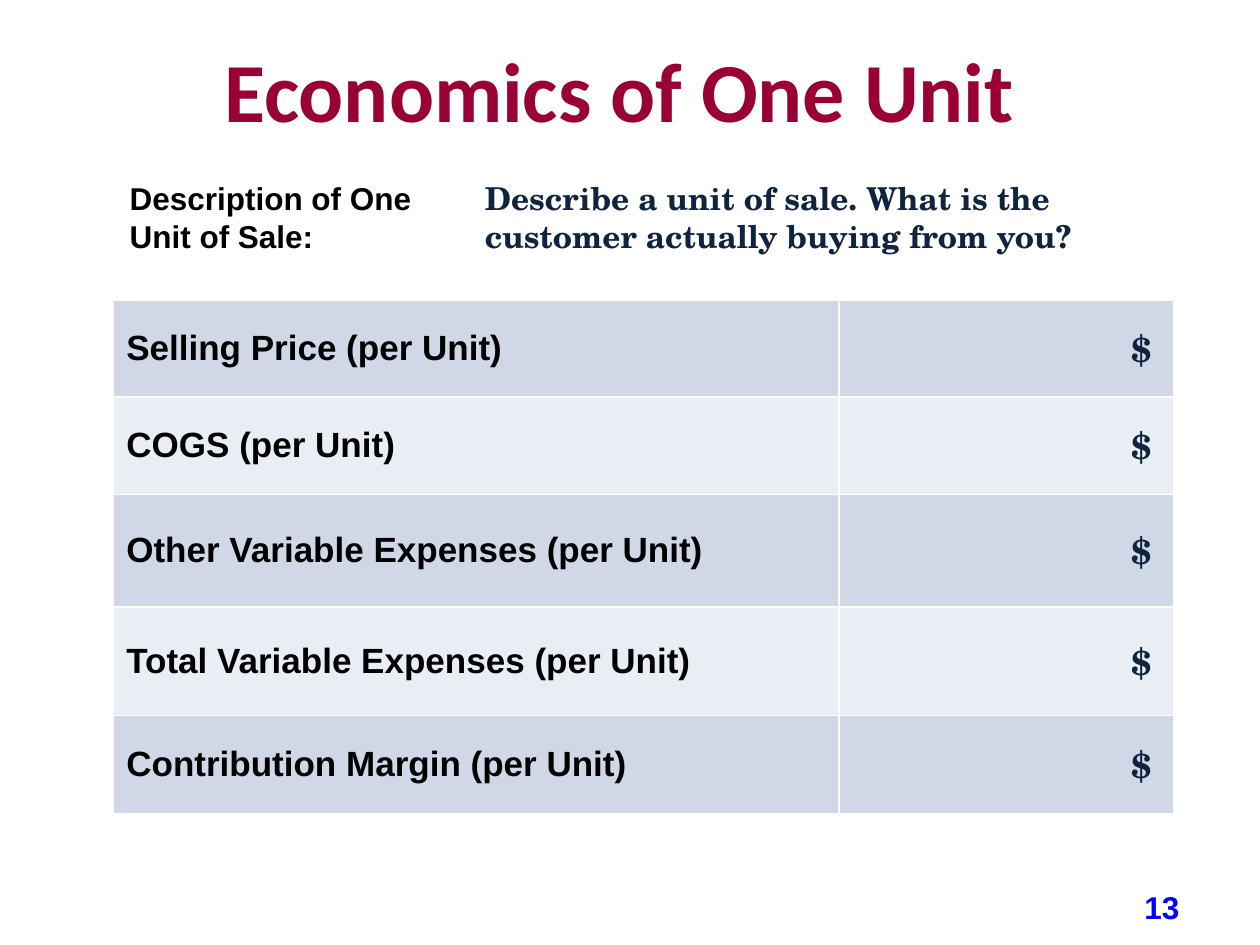
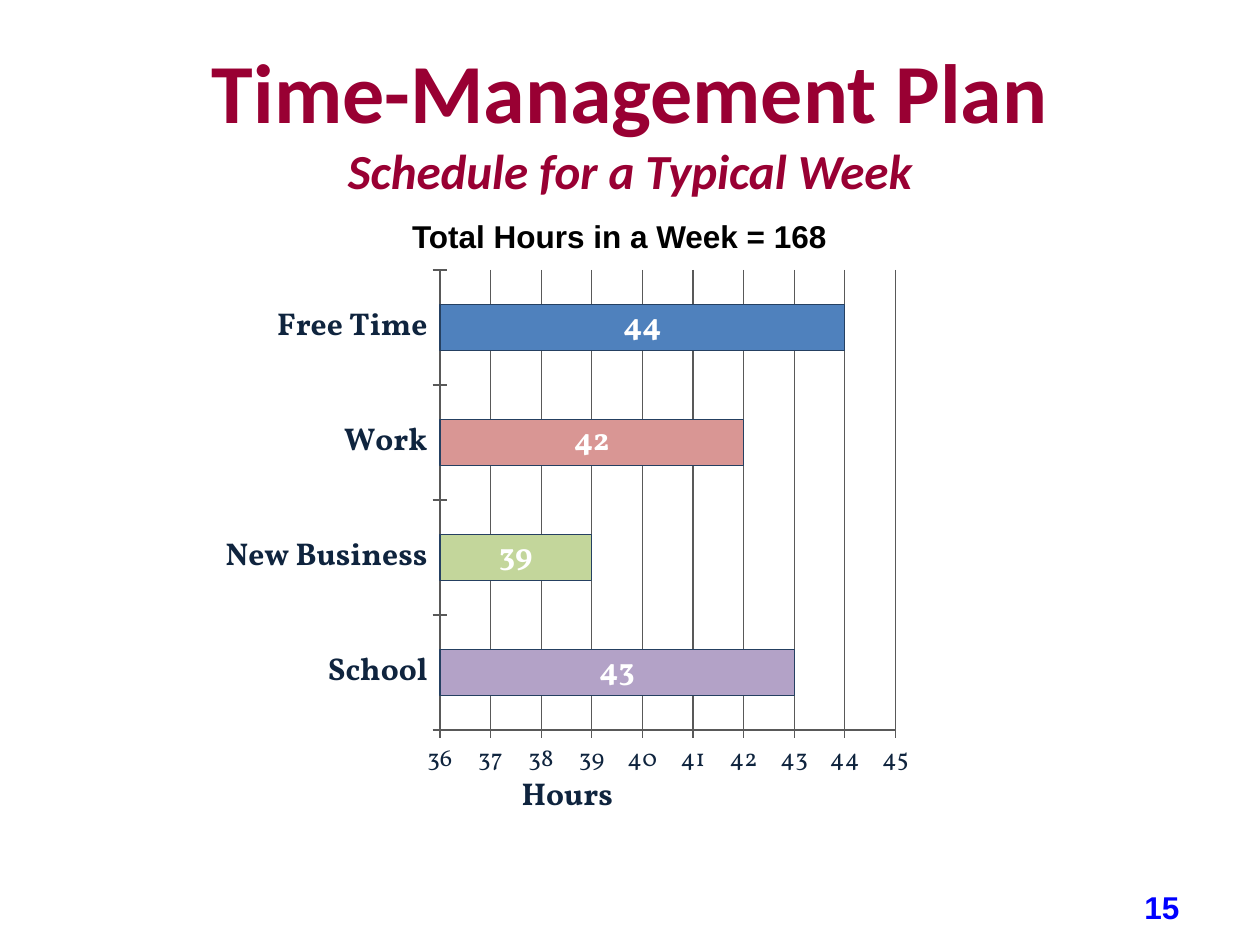
from dataclasses import dataclass

from lxml.etree import SubElement
from pptx import Presentation
from pptx.chart.data import CategoryChartData
from pptx.dml.color import RGBColor
from pptx.enum.chart import XL_CHART_TYPE, XL_LABEL_POSITION, XL_TICK_MARK
from pptx.enum.text import MSO_ANCHOR, PP_ALIGN
from pptx.oxml import parse_xml
from pptx.oxml.ns import nsdecls, qn
from pptx.util import Pt


@dataclass(frozen=True)
class Theme:
    heading: str = "990033"
    text: str = "000000"
    accent: str = "0F243E"
    number: str = "0000FF"
    white: str = "FFFFFF"
    bands: tuple = ("D0D8E8", "E9EDF4")
    bar: str = "4F81BD"
    bar_line: str = "254061"
    grid: str = "595959"
    heading_font: str = "Calibri"
    body_font: str = "Arial"
    entry_font: str = "TeX Gyre Schola"
    chart_font: str = "Vollkorn"
    title_size: int = 48
    subtitle_size: int = 28
    table_size: int = 20
    body_size: int = 18
    axis_size: int = 14


def set_font(font, name, size, color, bold=True, italic=False):
    font.name, font.size = name, Pt(size)
    font.bold, font.italic = bold, italic
    font.color.rgb = RGBColor.from_string(color)


def set_line(line, color, width=0.75):
    line.color.rgb = RGBColor.from_string(color)
    line.width = Pt(width)


def set_borders(cell, color, width):
    tcPr = cell._tc.get_or_add_tcPr()
    for side in ("lnL", "lnR", "lnT", "lnB"):
        ln = SubElement(tcPr, qn(f"a:{side}"), w=str(Pt(width)))
        fill = SubElement(ln, qn("a:solidFill"))
        SubElement(fill, qn("a:srgbClr"), val=color)


def set_plot_layout(chart, x, y, w, h):
    """Place the inner plot area, in fractions of the chart."""
    plot_area = chart._chartSpace.chart.plotArea
    for old in plot_area.findall(qn("c:layout")):
        plot_area.remove(old)
    plot_area.insert(0, parse_xml(
        f'<c:layout {nsdecls("c")}><c:manualLayout><c:layoutTarget val="inner"/>'
        '<c:xMode val="edge"/><c:yMode val="edge"/>'
        f'<c:x val="{x}"/><c:y val="{y}"/><c:w val="{w}"/><c:h val="{h}"/>'
        '</c:manualLayout></c:layout>'))


class Deck:
    def __init__(self, theme):
        self.theme = theme
        self.prs = Presentation()
        self.prs.slide_width, self.prs.slide_height = Pt(720), Pt(540)

    def slide(self, number):
        t = self.theme
        self.s = self.prs.slides.add_slide(self.prs.slide_layouts[6])
        self.text((643.5, 509.75, 30.5, 16.5), str(number), t.body_font, t.number,
                  align=PP_ALIGN.RIGHT, anchor=MSO_ANCHOR.MIDDLE, inset=(0, 3.6))

    def text(self, box, text, font, color, align=PP_ALIGN.LEFT,
             anchor=MSO_ANCHOR.TOP, inset=(7.2, 3.6), size=None):
        sp = self.s.shapes.add_textbox(*map(Pt, box))
        tf = sp.text_frame
        tf.word_wrap = True
        tf.vertical_anchor = anchor
        tf.margin_left = tf.margin_right = Pt(inset[0])
        tf.margin_top = tf.margin_bottom = Pt(inset[1])
        p = tf.paragraphs[0]
        p.text, p.alignment = text, align
        set_font(p.font, font, size or self.theme.body_size, color)
        return sp

    def title(self, box, title, subtitle=None):
        t = self.theme
        sp = self.text(box, title, t.heading_font, t.heading, PP_ALIGN.CENTER,
                       MSO_ANCHOR.MIDDLE, (7.2, 0), t.title_size)
        if subtitle:
            p = sp.text_frame.add_paragraph()
            p.text, p.alignment = subtitle, PP_ALIGN.CENTER
            set_font(p.font, t.heading_font, t.subtitle_size, t.heading, italic=True)

    def table(self, left, top, widths, heights, rows):
        t = self.theme
        frame = self.s.shapes.add_table(len(rows), len(widths), Pt(left), Pt(top),
                                        Pt(sum(widths)), Pt(sum(heights)))
        table = frame.table
        for column, width in zip(table.columns, widths):
            column.width = Pt(width)
        styles = ((t.body_font, t.text, PP_ALIGN.LEFT, 7.2),
                  (t.entry_font, t.accent, PP_ALIGN.RIGHT, 13))
        for i, (row, height) in enumerate(zip(rows, heights)):
            table.rows[i].height = Pt(height)
            for j, (text, (font, color, align, margin)) in enumerate(zip(row, styles)):
                cell = table.cell(i, j)
                set_borders(cell, t.white, 1)
                cell.fill.solid()
                cell.fill.fore_color.rgb = RGBColor.from_string(t.bands[i % 2])
                cell.vertical_anchor = MSO_ANCHOR.MIDDLE
                cell.margin_right = Pt(margin)
                p = cell.text_frame.paragraphs[0]
                p.text, p.alignment = text, align
                set_font(p.font, font, t.table_size, color)

    def bar_chart(self, box, bars, axis_title, low, high, layout):
        """Draw one bar for each (category, value, colour), from the bottom up."""
        t = self.theme
        categories, values, colors = zip(*bars)
        data = CategoryChartData()
        data.categories = categories
        data.add_series("Series 1", values)
        chart = self.s.shapes.add_chart(XL_CHART_TYPE.BAR_STACKED,
                                        *map(Pt, box), data).chart
        chart.has_legend = chart.has_title = False
        set_font(chart.font, t.chart_font, t.body_size, t.white)
        set_plot_layout(chart, *layout)

        plot = chart.plots[0]
        plot.vary_by_categories = False
        plot.gap_width, plot.overlap = 150, 100
        plot.has_data_labels = True
        labels = plot.data_labels
        labels.show_value = True
        labels.position = XL_LABEL_POSITION.CENTER
        set_font(labels.font, t.chart_font, t.body_size, t.white)

        series = plot.series[0]
        series.format.fill.solid()
        series.format.fill.fore_color.rgb = RGBColor.from_string(t.bar)
        set_line(series.format.line, t.bar_line)
        for i, color in enumerate(colors):
            if color != t.bar:
                point = series.points[i].format
                point.fill.solid()
                point.fill.fore_color.rgb = RGBColor.from_string(color)
                set_line(point.line, t.bar_line)

        cat_axis, val_axis = chart.category_axis, chart.value_axis
        for axis, size, bold in ((cat_axis, t.body_size, True),
                                 (val_axis, t.axis_size, False)):
            set_font(axis.tick_labels.font, t.chart_font, size, t.accent, bold)
            axis.major_tick_mark = XL_TICK_MARK.CROSS
            axis.minor_tick_mark = XL_TICK_MARK.NONE
            set_line(axis.format.line, t.grid)
        cat_axis.has_major_gridlines = False
        val_axis.has_major_gridlines = True
        set_line(val_axis.major_gridlines.format.line, t.grid)
        val_axis.minimum_scale, val_axis.maximum_scale = low, high
        val_axis.major_unit = 1
        p = val_axis.axis_title.text_frame.paragraphs[0]
        p.text = axis_title
        set_font(p.font, t.chart_font, t.body_size, t.accent)


def unit_economics(deck):
    t = deck.theme
    deck.slide(13)
    deck.title((30, 15, 648, 72), "Economics of One Unit")
    items = ("Selling Price", "COGS", "Other Variable Expenses",
             "Total Variable Expenses", "Contribution Margin")
    deck.table(65, 171.5, (414.5, 191.5), (55.5, 55.5, 64.5, 62, 56),
               [(f"{item} (per Unit)", "$") for item in items])
    deck.text((67, 98.75, 203, 51), "Description of One Unit of Sale:",
              t.body_font, t.text)
    sp = deck.text((270, 98.75, 402, 51),
                   "Describe a unit of sale. What is the customer actually buying from you?",
                   t.entry_font, t.accent)
    sp.fill.solid()
    sp.fill.fore_color.rgb = RGBColor.from_string(t.white)


def time_plan(deck):
    t = deck.theme
    deck.slide(15)
    deck.title((36, 21.5, 648, 93), "Time-Management Plan", "Schedule for a Typical Week")
    deck.text((156, 120.25, 396, 29), "Total Hours in a Week = 168",
              t.body_font, t.text, PP_ALIGN.CENTER)
    bars = (("School", 43, "B3A2C7"), ("New Business", 39, "C3D69B"),
            ("Work", 42, "D99694"), ("Free Time", 44, t.bar))
    deck.bar_chart((102, 150, 528, 324), bars, "Hours", 36, 45,
                   (0.283, 0.013, 0.493, 0.812))


def main():
    deck = Deck(Theme())
    unit_economics(deck)
    time_plan(deck)
    deck.prs.save("out.pptx")


if __name__ == "__main__":
    main()
